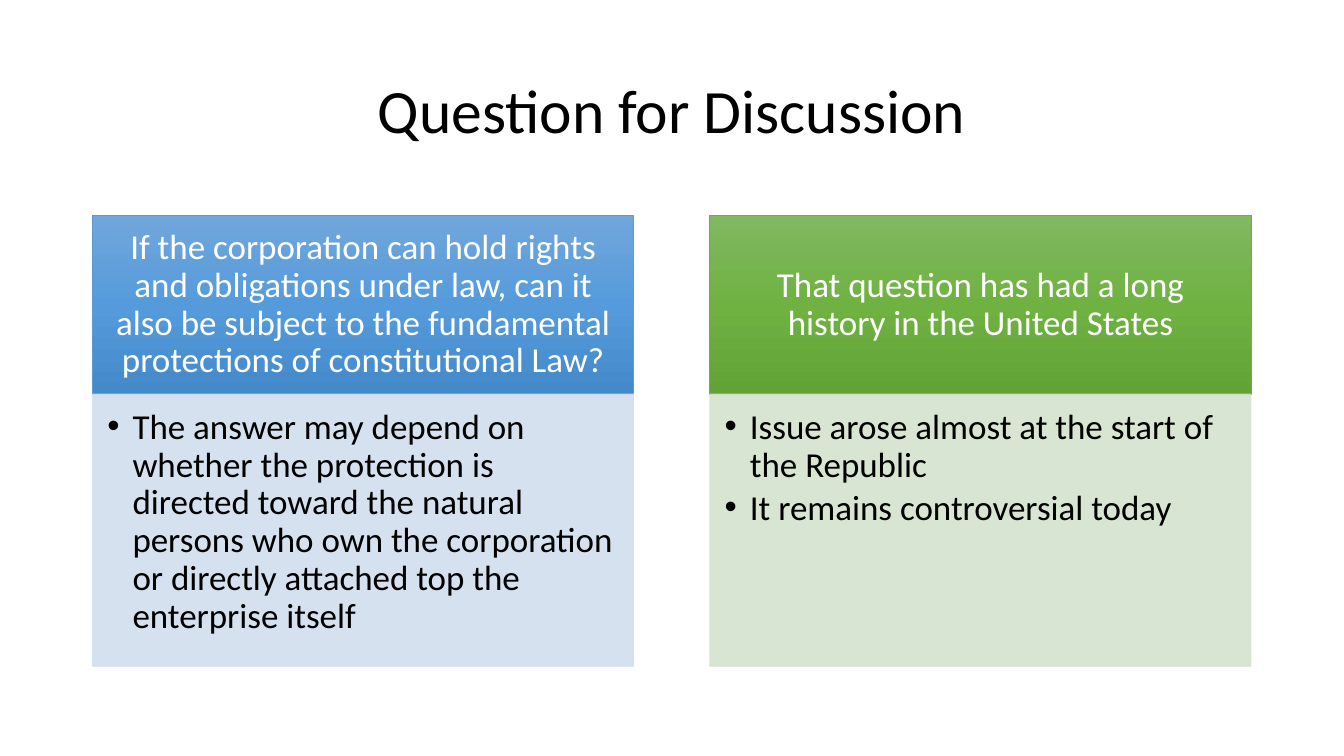
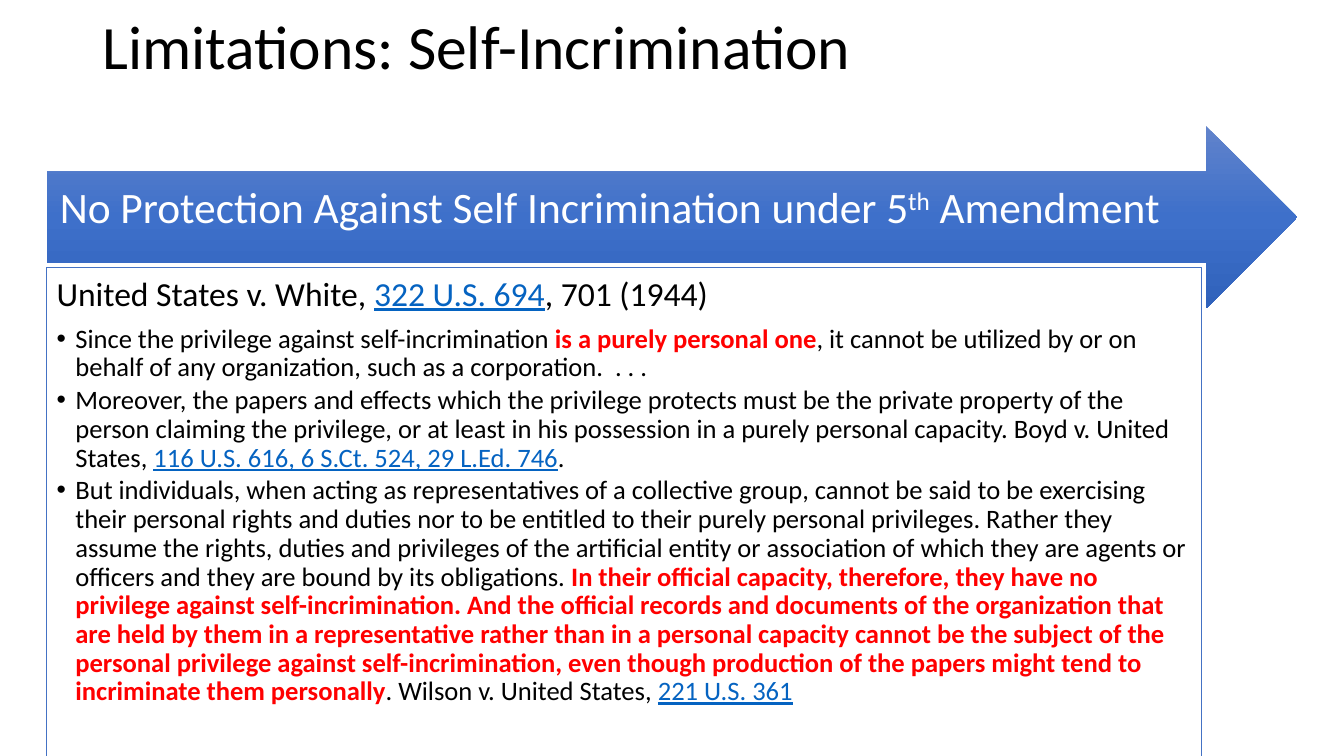
from copy import deepcopy
from dataclasses import dataclass
from typing import Any

from lxml.etree import SubElement
from pptx import Presentation
from pptx.dml.color import RGBColor
from pptx.enum.shapes import MSO_SHAPE
from pptx.enum.text import MSO_ANCHOR, MSO_AUTO_SIZE, PP_ALIGN
from pptx.oxml.ns import qn
from pptx.util import Pt

FONT = "Calibri"
BLACK, WHITE, RED, LINK_BLUE = "000000", "FFFFFF", "FF0000", "0563C1"
LEFT, TOP, HEADER_HEIGHT, BODY_HEIGHT = 66, 154, 127.5, 194.5
COLUMN_WIDTH, COLUMN_STEP = 386.6, 441


@dataclass(frozen=True)
class Span:
    """A stretch of text in one format."""
    text: str
    color: str | None = None
    bold: bool = False
    underline: bool = False
    raised: bool = False


@dataclass(frozen=True)
class Para:
    """A paragraph, with a hanging bullet when indent is set."""
    spans: tuple[Span, ...]
    size: float
    indent: float = 0
    after: float = 0
    align: PP_ALIGN = PP_ALIGN.LEFT


@dataclass(frozen=True)
class Box:
    """A filled shape that holds text."""
    frame: tuple[float, float, float, float]
    insets: tuple[float, float, float, float]
    paras: tuple[Para, ...]
    fills: tuple[str, ...]
    line: str | None = None
    opacity: int = 100
    color: str = BLACK
    anchor: MSO_ANCHOR = MSO_ANCHOR.TOP
    kind: MSO_SHAPE = MSO_SHAPE.RECTANGLE


@dataclass(frozen=True)
class Column:
    """A header over a list of points."""
    header: str
    points: tuple[str, ...]
    gradient: tuple[str, ...]
    line: str
    tint: str


COLUMNS = (
    Column(
        "If the corporation can hold rights and obligations under law, can it also be "
        "subject to the fundamental protections of constitutional Law?",
        ("The answer may depend on whether the protection is directed toward the natural "
         "persons who own the corporation or directly attached top the enterprise itself",),
        ("71A6DB", "559BDB", "448ACA"), "5B9BD5", "D2DEEF"),
    Column(
        "That question has had a long history in the United States",
        ("Issue arose almost at the start of the Republic", "It remains controversial today"),
        ("81B861", "6FB242", "62A336"), "70AD47", "D5E3CF"),
)


def link(text: str) -> Span:
    """Return a citation in link style."""
    return Span(text, LINK_BLUE, underline=True)


def stress(text: str) -> Span:
    """Return stressed text."""
    return Span(text, RED, bold=True)


CASE_TITLE = (Span("United States v. White, "), link("322 U.S. 694"), Span(", 701 (1944)"))
CASE_POINTS = (
    (Span("Since the privilege against self-incrimination "),
     stress("is a purely personal one"),
     Span(", it cannot be utilized by or on behalf of any organization, such as a "
          "corporation.  . . .")),
    (Span("Moreover, the papers and effects which the privilege protects must be the private "
          "property of the person claiming the privilege, or at least in his possession in a "
          "purely personal capacity. Boyd v. United States, "),
     link("116 U.S. 616, 6 S.Ct. 524, 29 L.Ed. 746"),
     Span(".")),
    (Span("But individuals, when acting as representatives of a collective group, cannot be "
          "said to be exercising their personal rights and duties nor to be entitled to their "
          "purely personal privileges. Rather they assume the rights, duties and privileges of "
          "the artificial entity or association of which they are agents or officers and they "
          "are bound by its obligations. "),
     stress("In their official capacity, therefore, they have no privilege against "
            "self-incrimination. And the official records and documents of the organization "
            "that are held by them in a representative rather than in a personal capacity "
            "cannot be the subject of the personal privilege against self-incrimination, even "
            "though production of the papers might tend to incriminate them personally"),
     Span(". Wilson v. United States, "),
     link("221 U.S. 361")),
)


def rgb(color: str) -> RGBColor:
    """Return a colour from its hex string."""
    return RGBColor.from_string(color)


def apply(target: Any, values: dict[str, Any]) -> None:
    """Set each named attribute of the target."""
    for name, value in values.items():
        setattr(target, name, value)


def place(shape: Any, frame: tuple[float, float, float, float]) -> None:
    """Move and size a shape."""
    apply(shape, dict(zip(("left", "top", "width", "height"), map(Pt, frame))))


def write_para(paragraph: Any, para: Para, color: str) -> None:
    """Write and format one paragraph."""
    if para.indent:
        properties = paragraph._p.get_or_add_pPr()
        properties.set("marL", str(Pt(para.indent)))
        properties.set("indent", str(-Pt(para.indent)))
        SubElement(properties, qn("a:buFont"), typeface="Arial")
        SubElement(properties, qn("a:buChar"), char="•")
    apply(paragraph, {"alignment": para.align, "line_spacing": 0.9, "space_before": Pt(0),
                      "space_after": Pt(para.size * para.after)})
    for span in para.spans:
        run = paragraph.add_run()
        run.text = span.text
        apply(run.font, {"name": FONT, "size": Pt(para.size), "bold": span.bold,
                         "underline": span.underline})
        run.font.color.rgb = rgb(span.color or color)
        if span.raised:
            run._r.get_or_add_rPr().set("baseline", "30000")


def paint(shape: Any, box: Box) -> None:
    """Fill and outline a shape."""
    properties = shape._element.spPr
    if len(box.fills) == 1:
        shape.fill.solid()
        shape.fill.fore_color.rgb = rgb(box.fills[0])
    else:
        shape.fill.gradient()
        shape.fill.gradient_angle = 270
        stops = properties.find(".//" + qn("a:gsLst"))
        for _ in box.fills[2:]:
            stops.insert(1, deepcopy(stops[0]))
        for index, (stop, color) in enumerate(zip(shape.fill.gradient_stops, box.fills)):
            stop.position = index / (len(box.fills) - 1)
            stop.color.rgb = rgb(color)
    if box.line:
        shape.line.color.rgb = rgb(box.line)
        shape.line.width = Pt(0.5)
    else:
        shape.line.fill.background()
    if box.opacity < 100:
        for color in list(properties.iter(qn("a:srgbClr"))):
            SubElement(color, qn("a:alpha"), val=str(box.opacity * 1000))


def draw_box(page: Any, box: Box) -> None:
    """Draw a shape with its text."""
    shape = page.shapes.add_shape(box.kind, *map(Pt, box.frame))
    shape.shadow.inherit = False
    paint(shape, box)
    frame = shape.text_frame
    margins = ("margin_left", "margin_top", "margin_right", "margin_bottom")
    apply(frame, dict(zip(margins, map(Pt, box.insets))))
    apply(frame, {"word_wrap": True, "vertical_anchor": box.anchor})
    for index, para in enumerate(box.paras):
        paragraph = frame.add_paragraph() if index else frame.paragraphs[0]
        write_para(paragraph, para, box.color)


def add_page(deck: Any, title: str, top: float, height: float, align: PP_ALIGN) -> Any:
    """Add a page with its title."""
    page = deck.slides.add_slide(deck.slide_layouts[5])
    place(page.shapes.title, (LEFT, top, 828, height))
    frame = page.shapes.title.text_frame
    apply(frame, {"word_wrap": True, "auto_size": MSO_AUTO_SIZE.NONE,
                  "vertical_anchor": MSO_ANCHOR.MIDDLE})
    write_para(frame.paragraphs[0], Para((Span(title),), 44, align=align), BLACK)
    return page


def draw_column(page: Any, column: Column, left: float) -> None:
    """Draw a header box and the points below it."""
    header = Para((Span(column.header),), 25, after=0.35, align=PP_ALIGN.CENTER)
    points = tuple(Para((Span(point),), 25, indent=18, after=0.15) for point in column.points)
    draw_box(page, Box((left, TOP, COLUMN_WIDTH, HEADER_HEIGHT), (14, 8, 14, 8), (header,),
                       column.gradient, column.line, color=WHITE, anchor=MSO_ANCHOR.MIDDLE))
    draw_box(page, Box((left, TOP + HEADER_HEIGHT, COLUMN_WIDTH, BODY_HEIGHT),
                       (10.7, 10.7, 14, 16), points, (column.tint,), column.tint, 90))


def build_discussion(deck: Any) -> None:
    """Build the page with two columns."""
    page = add_page(deck, "Question for Discussion", 28.75, 104.4, PP_ALIGN.CENTER)
    for index, column in enumerate(COLUMNS):
        draw_column(page, column, LEFT + index * COLUMN_STEP)


def build_limitations(deck: Any) -> None:
    """Build the page with the arrow and the case text."""
    page = add_page(deck, "Limitations: Self-Incrimination", 0, 70.5, PP_ALIGN.LEFT)
    heading = Para((Span("No Protection Against Self Incrimination under 5"),
                    Span("th", raised=True), Span(" Amendment")), 31, after=0.35)
    draw_box(page, Box((33.3, 90, 893.4, 130.3), (9.4, 9.4, 20, 20.7), (heading,),
                       ("6183CB", "3E70CA", "3062BB"), color=WHITE,
                       anchor=MSO_ANCHOR.MIDDLE, kind=MSO_SHAPE.RIGHT_ARROW))
    points = tuple(Para(spans, 19, indent=13.5, after=0.15) for spans in CASE_POINTS)
    draw_box(page, Box((33.3, 190.8, 825, 349.2), (7.2, 7.2, 7.2, 7.2),
                       (Para(CASE_TITLE, 24, after=0.35), *points), (WHITE,), "4472C4"))


def main() -> None:
    """Build and save the deck."""
    deck = Presentation()
    apply(deck, {"slide_width": Pt(960), "slide_height": Pt(540)})
    build_discussion(deck)
    build_limitations(deck)
    deck.save("out.pptx")


if __name__ == "__main__":
    main()
